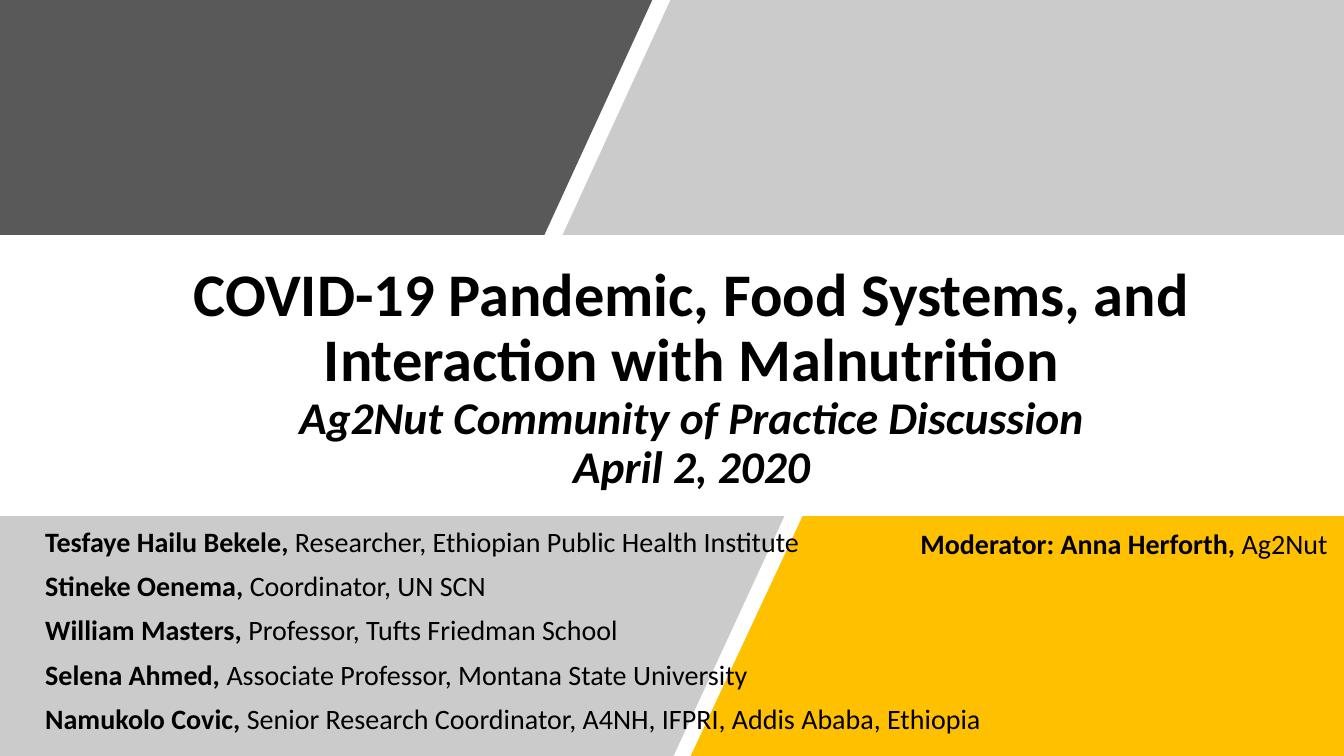
import dataclasses
import pptx
import pptx.dml.color
import pptx.enum.text
import pptx.oxml
import pptx.oxml.ns
import pptx.util

Inches = pptx.util.Inches
Pt = pptx.util.Pt


@dataclasses.dataclass(frozen=True)
class Theme:
    font: str = "Calibri"
    ink: str = "000000"
    dark: str = "595959"
    gray: str = "7F7F7F"
    gold: str = "FFC000"
    white: str = "FFFFFF"
    title: float = 43.2
    sub: float = 32.4
    body: float = 20
    lead: float = 0.9
    gap: float = 10


class Deck:
    def __init__(self, theme):
        self.theme = theme
        self.file = pptx.Presentation()
        self.file.slide_width = Inches(13.33)
        self.file.slide_height = Inches(7.5)
        self.slide = self.file.slides.add_slide(self.file.slide_layouts[5])

    def panel(self, points, color, alpha=None):
        spots = [(Inches(x), Inches(y)) for x, y in points]
        pen = self.slide.shapes.build_freeform(*spots[0])
        pen.add_line_segments(spots[1:], close=True)
        shape = pen.convert_to_shape()
        shape.shadow.inherit = False
        shape.line.fill.background()
        shape.fill.solid()
        shape.fill.fore_color.rgb = pptx.dml.color.RGBColor.from_string(color)
        if alpha is not None:
            tone = shape.fill._xPr.find(".//" + pptx.oxml.ns.qn("a:srgbClr"))
            node = pptx.oxml.parse_xml(
                f'<a:alpha {pptx.oxml.ns.nsdecls("a")} val="{alpha * 1000}"/>')
            tone.append(node)

    def run(self, para, text, size, bold=True, italic=False):
        run = para.add_run()
        run.text = text
        font = run.font
        font.name = self.theme.font
        font.size = Pt(size)
        font.bold = bold
        font.italic = italic
        font.color.rgb = pptx.dml.color.RGBColor.from_string(self.theme.ink)

    def title(self, box, lines):
        shape = self.slide.shapes.title
        shape.left, shape.top, shape.width, shape.height = map(Inches, box)
        frame = shape.text_frame
        frame.word_wrap = True
        frame.auto_size = pptx.enum.text.MSO_AUTO_SIZE.NONE
        frame.vertical_anchor = pptx.enum.text.MSO_ANCHOR.BOTTOM
        para = frame.paragraphs[0]
        para.alignment = pptx.enum.text.PP_ALIGN.CENTER
        para.line_spacing = self.theme.lead
        for i, (text, size, italic) in enumerate(lines):
            if i:
                para.add_line_break()
            self.run(para, text, size, italic=italic)

    def people(self, box, rows):
        frame = self.slide.shapes.add_textbox(*map(Inches, box)).text_frame
        frame.word_wrap = True
        for i, (name, role) in enumerate(rows):
            para = frame.add_paragraph() if i else frame.paragraphs[0]
            para.line_spacing = self.theme.lead
            para.space_before = Pt(self.theme.gap)
            self.run(para, name, self.theme.body)
            self.run(para, role, self.theme.body, bold=False)


def main():
    theme = Theme()
    deck = Deck(theme)
    wide, high = 13.33, 7.5
    upper, lower = 2.33, 5.12

    deck.title((0.93, 3.49, 11.86, 1.45), [
        ("COVID-19 Pandemic, Food Systems, and Interaction with Malnutrition",
         theme.title, False),
        ("Ag2Nut Community of Practice Discussion", theme.sub, True),
        ("April 2, 2020", theme.sub, True),
    ])

    deck.panel([(0, 0), (6.47, 0), (5.4, upper), (0, upper)], theme.dark)
    deck.panel([(6.65, 0), (wide, 0), (wide, upper), (5.58, upper)],
               theme.gray, 40)
    deck.panel([(7.83, lower), (11.67, lower), (11.67, high), (6.73, high)],
               theme.white)
    deck.panel([(7.96, lower), (wide, lower), (wide, high), (6.85, high)],
               theme.gold)
    deck.panel([(0, lower), (7.78, lower), (6.68, high), (0, high)],
               theme.gray, 40)

    deck.people((0.35, 5.19, 11.83, 1.62), [
        ("Tesfaye Hailu Bekele, ",
         "Researcher, Ethiopian Public Health Institute"),
        ("Stineke Oenema,", " Coordinator, UN SCN"),
        ("William Masters, ", "Professor, Tufts Friedman School"),
        ("Selena Ahmed, ", "Associate Professor, Montana State University"),
        ("Namukolo Covic, ",
         "Senior Research Coordinator, A4NH, IFPRI, Addis Ababa, Ethiopia"),
    ])
    deck.people((9.03, 5.21, 4.43, 0.42),
                [("Moderator: Anna Herforth, ", "Ag2Nut")])
    deck.file.save("out.pptx")


if __name__ == "__main__":
    main()
